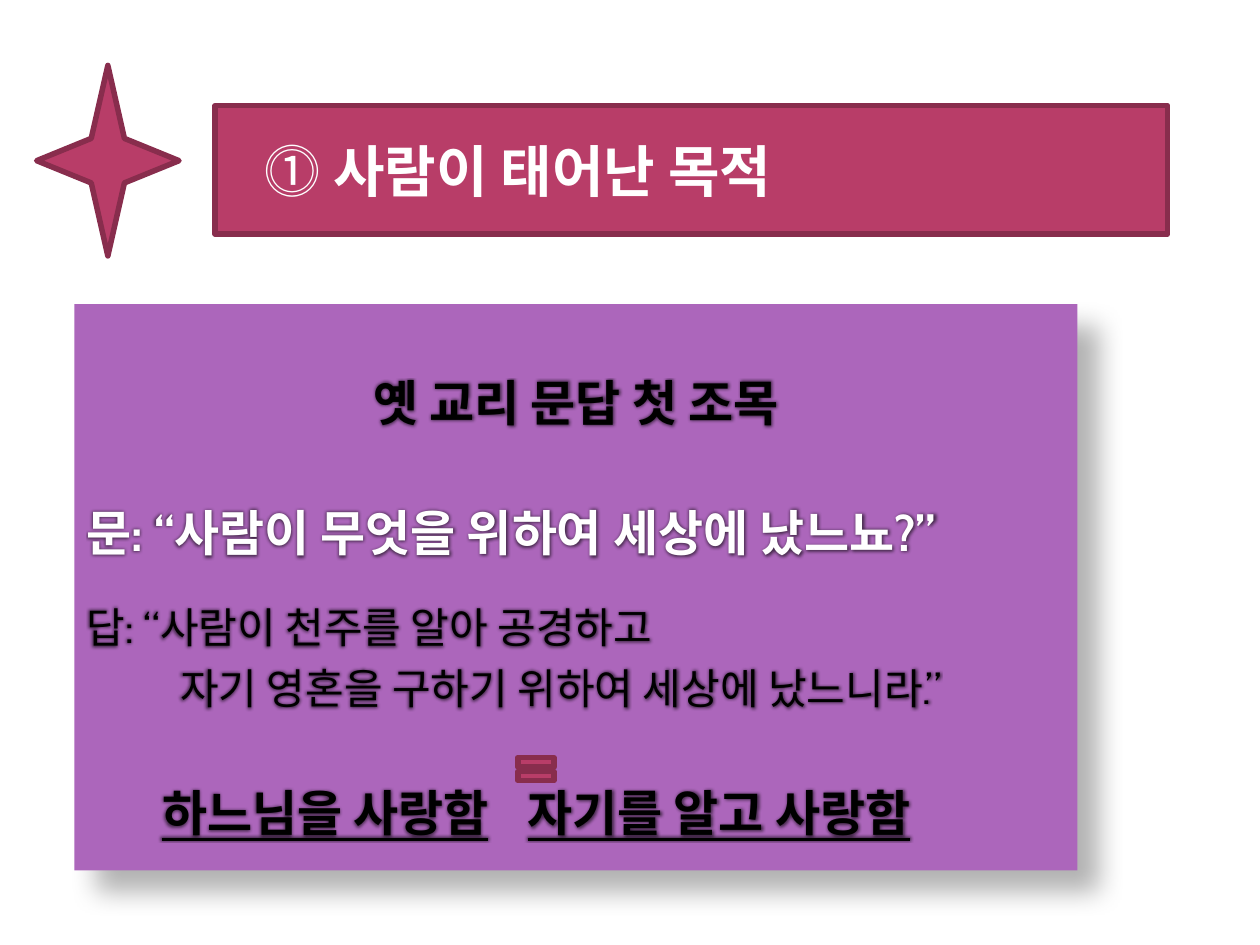
from dataclasses import dataclass, field

from lxml.etree import SubElement
from pptx import Presentation
from pptx.dml.color import RGBColor
from pptx.enum.shapes import MSO_SHAPE
from pptx.enum.text import MSO_ANCHOR, PP_ALIGN
from pptx.oxml.ns import qn
from pptx.util import Cm, Pt

COLORS = {"rose": "B83D68", "wine": "882D4D", "purple": "AC66BB",
          "white": "FFFFFF", "black": "000000"}
FONT = "Cabin"


@dataclass
class Box:
    preset: MSO_SHAPE
    left: float
    top: float
    width: float
    height: float
    fill: str = "rose"
    line: str = "wine"


@dataclass
class Line:
    text: str
    color: str = "black"
    margin: float = 0.76
    indent: float = -0.76
    tab: float = 0
    spacing: dict = field(default_factory=dict)
    style: dict = field(default_factory=dict)


def rgb(name: str) -> RGBColor:
    return RGBColor.from_string(COLORS[name])


def draw_box(slide, box: Box):
    shape = slide.shapes.add_shape(box.preset, Cm(box.left), Cm(box.top),
                                   Cm(box.width), Cm(box.height))
    shape.shadow.inherit = False
    shape.fill.solid()
    shape.fill.fore_color.rgb = rgb(box.fill)
    if box.line:
        shape.line.color.rgb = rgb(box.line)
        shape.line.width = Pt(3.15)
    else:
        shape.line.fill.background()
    return shape


def add_effect(effects, kind: str, alpha: int, **attributes: str) -> None:
    effect = SubElement(effects, qn(f"a:{kind}"), attributes)
    color = SubElement(effect, qn("a:srgbClr"), val=COLORS["black"])
    SubElement(color, qn("a:alpha"), val=str(alpha * 1000))


def add_run(paragraph, text: str, color: str, style: dict):
    run = paragraph.add_run()
    run.text = text
    run.font.name = FONT
    run.font.color.rgb = rgb(color)
    for name, value in style.items():
        setattr(run.font, name, value)
    return run


def add_glow(run) -> None:
    effects = run._r.rPr.makeelement(qn("a:effectLst"))
    run._r.rPr.find(qn("a:solidFill")).addnext(effects)
    add_effect(effects, "glow", 60, rad=str(Pt(3)))


def write_line(paragraph, line: Line) -> None:
    properties = paragraph._p.get_or_add_pPr()
    properties.set("marL", str(Cm(line.margin)))
    properties.set("indent", str(Cm(line.indent)))
    if line.tab:
        tabs = SubElement(properties, qn("a:tabLst"))
        SubElement(tabs, qn("a:tab"), pos=str(Cm(line.tab)), algn="l")
    for name, value in ({"alignment": PP_ALIGN.LEFT} | line.spacing).items():
        setattr(paragraph, name, value)
    add_glow(add_run(paragraph, line.text, line.color, line.style))


STRONG = {"size": Pt(28), "bold": True}
PLAIN = {"size": Pt(24), "bold": False}

CATECHISM = [
    Line("옛 교리 문답 첫 조목", spacing={"alignment": PP_ALIGN.CENTER}, style=STRONG),
    Line("문: “사람이 무엇을 위하여 세상에 났느뇨?”", "white",
         spacing={"space_before": Pt(41)}, style=STRONG),
    Line("답: “사람이 천주를 알아 공경하고",
         spacing={"space_before": Pt(23)}, style=PLAIN),
    Line("자기 영혼을 구하기 위하여 세상에 났느니라.”", margin=1.88, indent=0,
         spacing={"space_before": Pt(6)}, style=PLAIN),
    Line("하느님을 사랑함\t자기를 알고 사랑함", margin=0, indent=1.52, tab=10.36,
         spacing={"space_before": Pt(40)}, style=STRONG | {"underline": True}),
]


def main() -> None:
    deck = Presentation()
    deck.slide_width, deck.slide_height = Cm(25.4), Cm(19.05)
    slide = deck.slides.add_slide(deck.slide_layouts[6])

    # Catechism panel with its soft shadow
    panel = draw_box(slide, Box(MSO_SHAPE.RECTANGLE, 1.5, 6.13, 20.22, 11.42,
                                "purple", ""))
    add_effect(panel._element.spPr.find(qn("a:effectLst")), "outerShdw", 30,
               blurRad=str(Pt(15)), dist=str(Pt(18)), dir=str(45 * 60000),
               algn="tl", rotWithShape="0")
    frame = panel.text_frame
    frame.word_wrap = True
    frame.vertical_anchor = MSO_ANCHOR.TOP
    frame.margin_top = Cm(1.37)
    for index, line in enumerate(CATECHISM):
        write_line(frame.add_paragraph() if index else frame.paragraphs[0], line)

    # Star and equals sign
    star = draw_box(slide, Box(MSO_SHAPE.STAR_4_POINT, 0.74, 1.32, 2.87, 3.84))
    star.adjustments[0] = 0.165
    draw_box(slide, Box(MSO_SHAPE.MATH_EQUAL, 10.31, 15.11, 0.99, 0.79))

    # Title bar
    title = draw_box(slide, Box(MSO_SHAPE.RECTANGLE, 4.34, 2.13, 19.2, 2.59))
    title.text_frame.word_wrap = True
    title.text_frame.vertical_anchor = MSO_ANCHOR.MIDDLE
    title.text_frame.margin_left = Cm(1)
    heading = title.text_frame.paragraphs[0]
    heading.alignment = PP_ALIGN.LEFT
    for text, bold in (("⓵ ", False), ("사람이 태어난 목적", True)):
        add_run(heading, text, "white", {"size": Pt(32), "bold": bold})

    deck.save("out.pptx")


if __name__ == "__main__":
    main()
